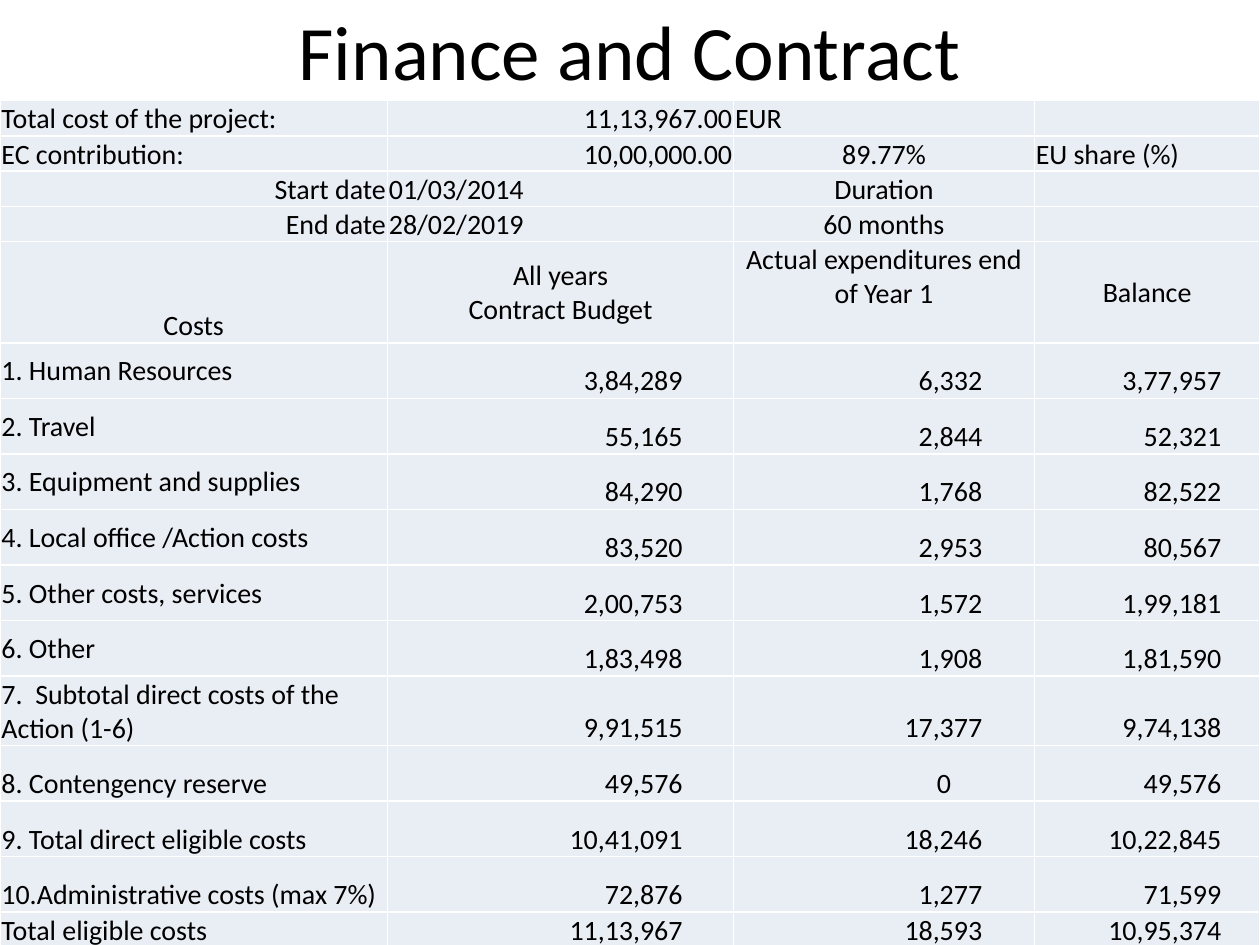
from pptx import Presentation
from pptx.dml.color import RGBColor
from pptx.enum import text
from pptx.util import Cm, Pt

BLACK = RGBColor(0x00, 0x00, 0x00)
PALE = RGBColor(0xE9, 0xED, 0xF4)
LEFT, MID, RIGHT = text.PP_ALIGN.LEFT, text.PP_ALIGN.CENTER, text.PP_ALIGN.RIGHT
TOP, CENTER, BOTTOM = text.MSO_ANCHOR.TOP, text.MSO_ANCHOR.MIDDLE, text.MSO_ANCHOR.BOTTOM


def style(para, size, align):
    para.alignment = align
    para.font.name = "Calibri"
    para.font.size = Pt(size)
    para.font.color.rgb = BLACK


deck = Presentation()
deck.slide_width, deck.slide_height = Cm(25.4), Cm(19.05)
slide = deck.slides.add_slide(deck.slide_layouts[6])

title = slide.shapes.add_textbox(Cm(1.27), Cm(-0.1), Cm(22.86), Cm(2.2)).text_frame
title.word_wrap = True
title.vertical_anchor = CENTER
title.text = "Finance and Contract"
style(title.paragraphs[0], 44, MID)

facts = [
    ("Total cost of the project:", "11,13,967.00", "EUR", ""),
    ("EC contribution:", "10,00,000.00", "89.77%", "EU share (%)"),
    ("Start date", "01/03/2014", "Duration", ""),
    ("End date", "28/02/2019", "60 months", ""),
    ("Costs", "All years\nContract Budget", "Actual expenditures end of Year 1", "Balance"),
]
aligns = [
    (LEFT, RIGHT, LEFT, LEFT),
    (LEFT, RIGHT, MID, LEFT),
    (RIGHT, LEFT, MID, LEFT),
    (RIGHT, LEFT, MID, LEFT),
    (MID, MID, MID, MID),
]
costs = [
    ("1. Human Resources", "3,84,289", "6,332", "3,77,957"),
    ("2. Travel", "55,165", "2,844", "52,321"),
    ("3. Equipment and supplies", "84,290", "1,768", "82,522"),
    ("4. Local office /Action costs", "83,520", "2,953", "80,567"),
    ("5. Other costs, services", "2,00,753", "1,572", "1,99,181"),
    ("6. Other", "1,83,498", "1,908", "1,81,590"),
    ("7.  Subtotal direct costs of the Action (1-6)", "9,91,515", "17,377", "9,74,138"),
    ("8. Contengency reserve", "49,576", "0", "49,576"),
    ("9. Total direct eligible costs", "10,41,091", "18,246", "10,22,845"),
    ("10.Administrative costs (max 7%)", "72,876", "1,277", "71,599"),
    ("Total eligible costs", "11,13,967", "18,593", "10,95,374"),
]
rows = facts + costs
aligns += [(LEFT, RIGHT, RIGHT, RIGHT)] * len(costs)
widths = [7.81, 6.98, 6.06, 4.55]
heights = [0.71] * 4 + [2.04] + [1.12] * 6 + [1.4] + [1.12] * 3 + [0.66]
insets = [0.03, 1.03, 1.05, 0.78]
head = len(facts) - 1

table = slide.shapes.add_table(
    len(rows), len(widths), Cm(0), Cm(2.03), Cm(25.4), Cm(17.02)
).table
table.first_row = table.horz_banding = False
for col, width in zip(table.columns, widths):
    col.width = Cm(width)
for row, height in zip(table.rows, heights):
    row.height = Cm(height)

for r, row in enumerate(rows):
    for c, words in enumerate(row):
        cell = table.cell(r, c)
        cell.fill.solid()
        cell.fill.fore_color.rgb = PALE
        cell.margin_left = cell.margin_top = cell.margin_right = Cm(0.03)
        cell.margin_bottom = 0
        cell.vertical_anchor = BOTTOM
        if r > head:
            cell.margin_right = Cm(1.68 if words == "0" else insets[c])
        if (r == head and c > 0) or (head < r < head + 8 and c == 0):
            cell.vertical_anchor = CENTER
        cell.text = words
        for para in cell.text_frame.paragraphs:
            style(para, 16, aligns[r][c])

table.cell(head, 2).vertical_anchor = TOP

deck.save("out.pptx")
